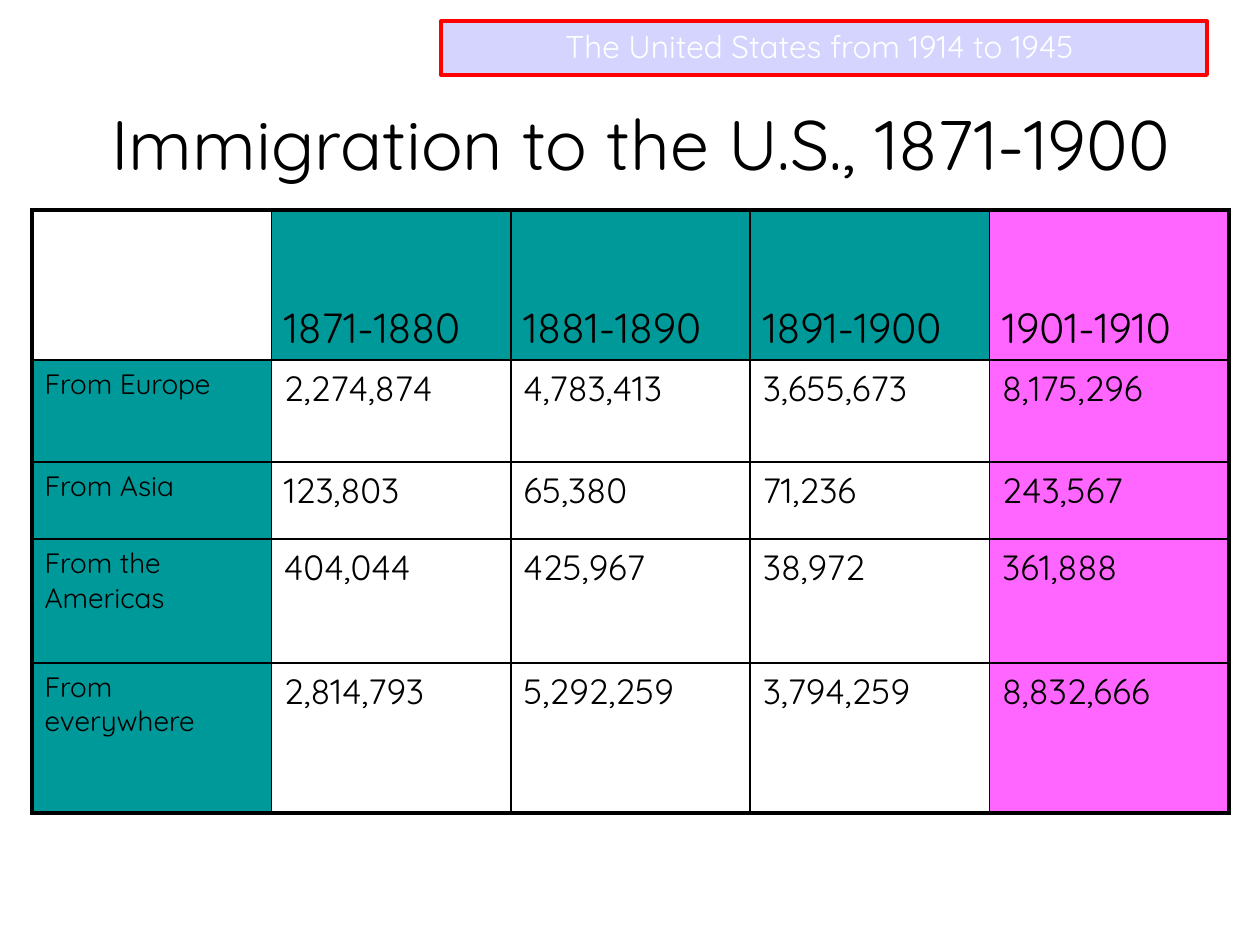
import pptx
import pptx.dml.color
import pptx.enum.shapes
import pptx.enum.text
import pptx.oxml.ns
import pptx.util
from lxml import etree

RGBColor = pptx.dml.color.RGBColor
ALIGN = pptx.enum.text.PP_ALIGN
ANCHOR = pptx.enum.text.MSO_ANCHOR
qn = pptx.oxml.ns.qn

BLACK = RGBColor(0x00, 0x00, 0x00)
WHITE = RGBColor(0xFF, 0xFF, 0xFF)
RED = RGBColor(0xFF, 0x00, 0x00)
BLUE = RGBColor(0x00, 0x00, 0xFF)
TEAL = RGBColor(0x00, 0x99, 0x99)
PINK = RGBColor(0xFF, 0x66, 0xFF)

FONT = "Quicksand"
PX = 914400 / 126
THIN, THICK = 1, 2.25

PERIODS = ["", "1871-1880", "1881-1890", "1891-1900", "1901-1910"]
ARRIVALS = [
    ["From Europe", "2,274,874", "4,783,413", "3,655,673", "8,175,296"],
    ["From Asia", "123,803", "65,380", "71,236", "243,567"],
    ["From the Americas", "404,044", "425,967", "38,972", "361,888"],
    ["From everywhere", "2,814,793", "5,292,259", "3,794,259", "8,832,666"],
]
ROW_HEIGHTS = [150, 102, 77, 124, 150]


def emu(px):
    return pptx.util.Emu(round(px * PX))


def write(frame, text, size, color=BLACK, align=ALIGN.LEFT, anchor=ANCHOR.TOP):
    frame.word_wrap = True
    frame.vertical_anchor = anchor
    paragraph = frame.paragraphs[0]
    paragraph.alignment = align
    run = paragraph.add_run()
    run.text = text
    run.font.name = FONT
    run.font.size = pptx.util.Pt(size)
    run.font.color.rgb = color


def set_borders(cell, **widths):
    """Add black borders in schema order; call before filling the cell."""
    properties = cell._tc.get_or_add_tcPr()
    for side in ("L", "R", "T", "B"):
        border = etree.SubElement(properties, qn(f"a:ln{side}"),
                                  w=str(pptx.util.Pt(widths[side])))
        solid = etree.SubElement(border, qn("a:solidFill"))
        etree.SubElement(solid, qn("a:srgbClr"), val=str(BLACK))


def add_banner(slide, left, top, width, height):
    banner = slide.shapes.add_shape(
        pptx.enum.shapes.MSO_SHAPE.RECTANGLE,
        emu(left), emu(top), emu(width), emu(height))
    banner.shadow.inherit = False
    banner.fill.solid()
    banner.fill.fore_color.rgb = BLUE
    tint = banner._element.spPr.find(f"{qn('a:solidFill')}/{qn('a:srgbClr')}")
    etree.SubElement(tint, qn("a:alpha"), val="17000")
    banner.line.color.rgb = RED
    banner.line.width = pptx.util.Pt(THICK)
    write(banner.text_frame, "The United States from 1914 to 1945 ", 18,
          color=WHITE, align=ALIGN.CENTER)


def add_title(slide, left, top, width, height):
    title = slide.shapes.add_textbox(emu(left), emu(top), emu(width), emu(height))
    write(title.text_frame, "Immigration to the U.S., 1871-1900", 40,
          align=ALIGN.CENTER, anchor=ANCHOR.MIDDLE)


def cell_color(row, column, last_column):
    if column == last_column:
        return PINK
    # Headings are teal, apart from the empty corner
    return TEAL if (row == 0) != (column == 0) else WHITE


def add_immigration_table(slide, left, top, width):
    rows = [PERIODS, *ARRIVALS]
    last_row, last_column = len(rows) - 1, len(PERIODS) - 1
    immigration = slide.shapes.add_table(
        len(rows), len(PERIODS), emu(left), emu(top),
        emu(width), emu(sum(ROW_HEIGHTS))).table
    immigration.first_row = False
    immigration.horz_banding = False
    for column in immigration.columns:
        column.width = emu(width / len(PERIODS))
    for row, height in zip(immigration.rows, ROW_HEIGHTS):
        row.height = emu(height)

    for r, entries in enumerate(rows):
        for c, entry in enumerate(entries):
            cell = immigration.cell(r, c)
            # Thick outer frame, thin inner grid
            set_borders(cell,
                        L=THICK if c == 0 else THIN,
                        R=THICK if c == last_column else THIN,
                        T=THICK if r == 0 else THIN,
                        B=THICK if r == last_row else THIN)
            cell.fill.solid()
            cell.fill.fore_color.rgb = cell_color(r, c, last_column)
            if entry:
                write(cell.text_frame, entry,
                      24 if r == 0 else 16 if c == 0 else 20)
                cell.vertical_anchor = ANCHOR.BOTTOM if r == 0 else ANCHOR.TOP


def main():
    deck = pptx.Presentation()
    deck.slide_width, deck.slide_height = emu(1260), emu(945)
    slide = deck.slides.add_slide(deck.slide_layouts[6])
    add_banner(slide, 441, 21, 766, 54)
    add_title(slide, 42, 63, 1197, 158)
    add_immigration_table(slide, 32, 210, 1197)
    deck.save("out.pptx")


if __name__ == "__main__":
    main()
